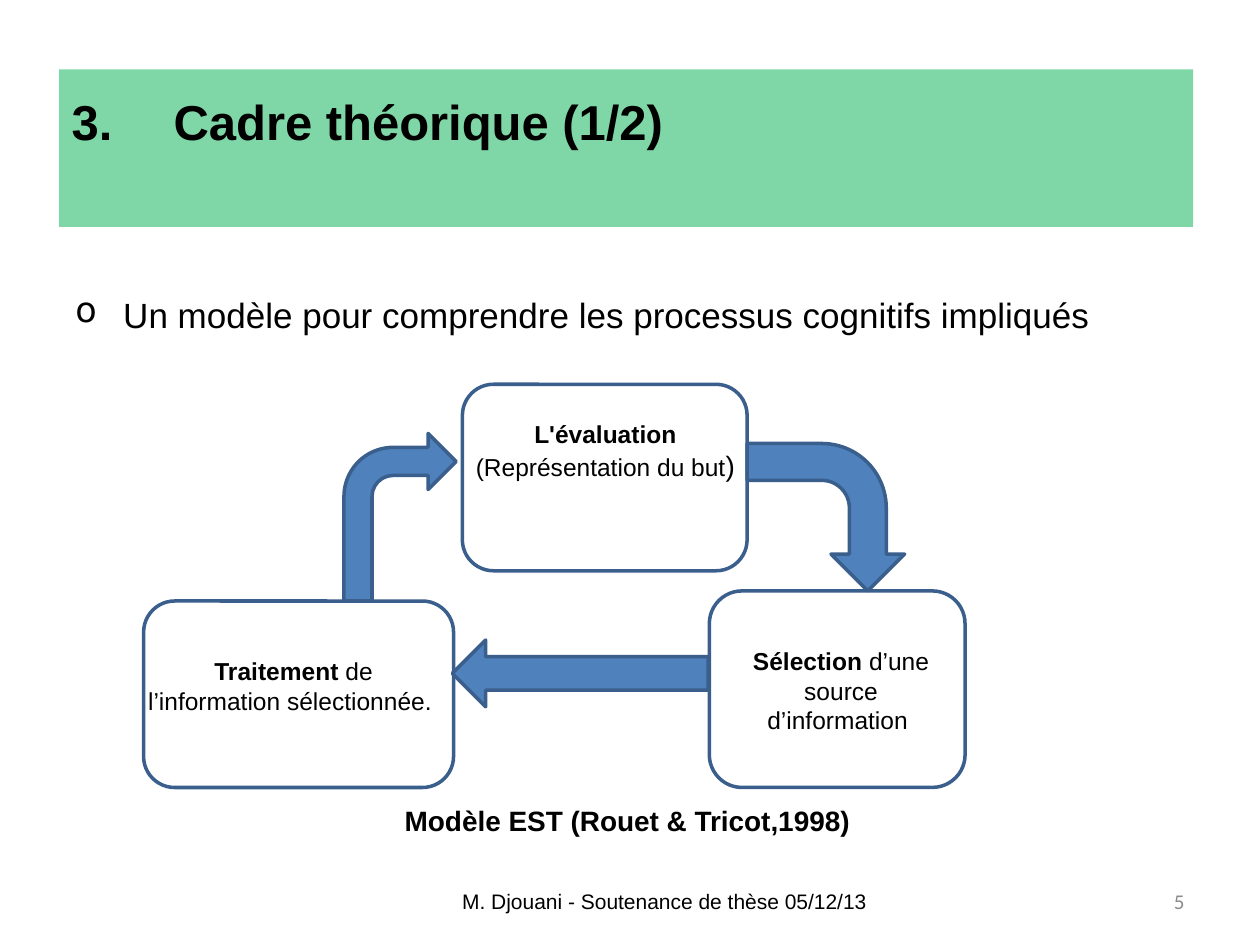
from lxml import etree
from pptx import Presentation
from pptx.dml.color import RGBColor
from pptx.enum.shapes import MSO_SHAPE
from pptx.enum.text import MSO_ANCHOR, PP_ALIGN
from pptx.oxml.ns import qn
from pptx.util import Inches, Pt

ROUNDED = MSO_SHAPE.ROUNDED_RECTANGLE
BENT = MSO_SHAPE.BENT_ARROW
LEFT_ARROW = MSO_SHAPE.LEFT_ARROW
LEFT, CENTER, RIGHT = PP_ALIGN.LEFT, PP_ALIGN.CENTER, PP_ALIGN.RIGHT
TOP, MIDDLE = MSO_ANCHOR.TOP, MSO_ANCHOR.MIDDLE

GREEN, WHITE, BLUE, OUTLINE = "00B050", "FFFFFF", "4F81BD", "3A5F8C"
BLACK, GREY = "000000", "8C8C8C"


def rgb(value):
    return RGBColor.from_string(value)


def write(frame, runs, align=LEFT, anchor=TOP, font="Arial", color=BLACK):
    """Fill a text frame with one paragraph of (text, size, bold) runs."""
    frame.word_wrap = True
    frame.vertical_anchor = anchor
    paragraph = frame.paragraphs[0]
    paragraph.alignment = align
    for text, size, bold in runs:
        run = paragraph.add_run()
        run.text = text
        run.font.color.rgb = rgb(color)
        for key, value in {"name": font, "size": Pt(size), "bold": bold}.items():
            setattr(run.font, key, value)
    return paragraph


prs = Presentation()
prs.slide_width, prs.slide_height = Inches(10), Inches(7.5)
slide = prs.slides.add_slide(prs.slide_layouts[6])
shapes = slide.shapes

# Title band, half-transparent green
band = shapes.add_shape(MSO_SHAPE.RECTANGLE, *map(Inches, (0.47, 0.55, 9, 1.25)))
band.shadow.inherit = False
band.fill.solid()
band.fill.fore_color.rgb = rgb(GREEN)
band.line.fill.background()
green = next(band.fill._xPr.iter(qn("a:srgbClr")))
etree.SubElement(green, qn("a:alpha"), val="50000")
band.text_frame.margin_top = Inches(0.18)
title = write(band.text_frame, [("Cadre théorique (1/2)", 28, True)])

# Introductory point
intro_box = shapes.add_textbox(*map(Inches, (0.5, 2.28, 9, 0.45)))
intro = write(intro_box.text_frame,
              [("Un modèle pour comprendre les processus cognitifs impliqués", 20, False)])

# Hanging number and bullet
for paragraph, indent, tag, marker in [
    (title, 0.81, "a:buAutoNum", {"type": "arabicPeriod", "startAt": "3"}),
    (intro, 0.38, "a:buChar", {"char": "o"}),
]:
    properties = paragraph._p.get_or_add_pPr()
    properties.set("marL", str(Inches(indent)))
    properties.set("indent", str(-Inches(indent)))
    etree.SubElement(properties, qn(tag), marker)

# Cycle: three stages, then the arrows between them
for kind, place, fill, rotation in [
    (ROUNDED, (3.67, 3.05, 2.26, 1.48), WHITE, 0),
    (ROUNDED, (1.14, 4.77, 2.46, 1.48), WHITE, 0),
    (ROUNDED, (5.63, 4.69, 2.03, 1.56), WHITE, 0),
    (BENT, (2.73, 3.44, 0.89, 1.33), BLUE, 0),
    (BENT, (5.97, 3.48, 1.17, 1.25), BLUE, 90),
    (LEFT_ARROW, (3.59, 5.08, 2.03, 0.53), BLUE, 0),
]:
    part = shapes.add_shape(kind, *map(Inches, place))
    part.shadow.inherit = False
    part.rotation = rotation
    part.fill.solid()
    part.fill.fore_color.rgb = rgb(fill)
    part.line.color.rgb = rgb(OUTLINE)
    part.line.width = Pt(2)

# Stage labels, caption, footer and slide number
for place, runs, formats in [
    ((3.67, 3.28, 2.27, 0.61),
     [("L'évaluation ", 14, True), ("(Représentation du but", 14, False), (") ", 16, False)], {}),
    ((1.06, 5.16, 2.54, 0.57),
     [("Traitement ", 14, True), ("de l’information sélectionnée. ", 14, False)], {}),
    ((5.7, 5.08, 1.95, 0.57),
     [("Sélection ", 14, True), ("d’une source d’information ", 14, False)], {}),
    ((3.05, 6.33, 3.86, 0.37), [("Modèle EST (Rouet & Tricot,1998)", 16, True)], {}),
    ((3.42, 6.95, 3.71, 0.4),
     [("M. Djouani - Soutenance de thèse 05/12/13", 12, False)], {"anchor": MIDDLE}),
    ((7.17, 6.95, 2.33, 0.4), [("5", 12, False)],
     {"align": RIGHT, "anchor": MIDDLE, "font": "Calibri", "color": GREY}),
]:
    label = shapes.add_textbox(*map(Inches, place))
    write(label.text_frame, runs, **{"align": CENTER, **formats})

prs.save("out.pptx")
